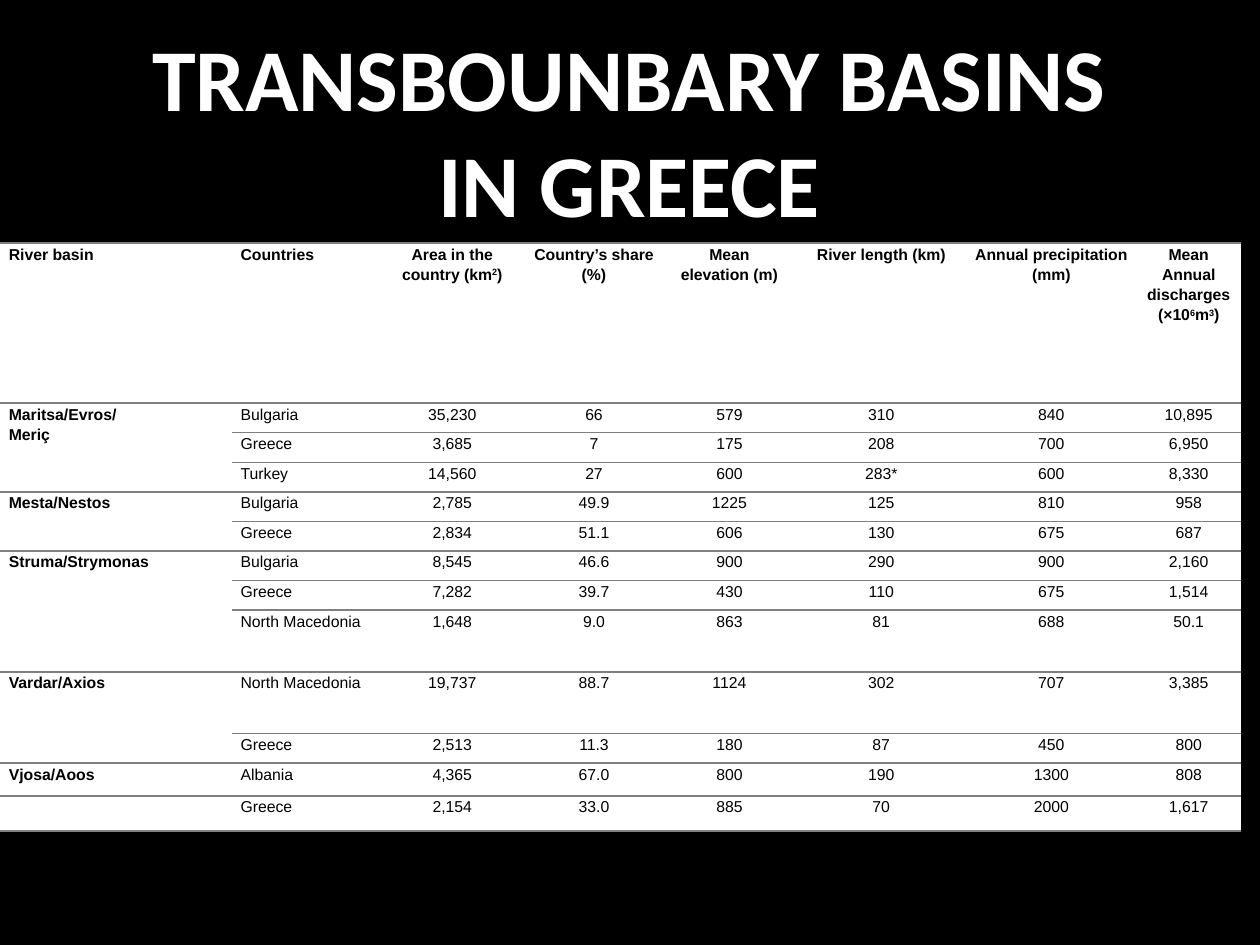
import pptx
import pptx.dml.color
import pptx.enum.text
import pptx.oxml
import pptx.oxml.ns
import pptx.util

Inches = pptx.util.Inches
ALIGN = pptx.enum.text.PP_ALIGN
ANCHOR = pptx.enum.text.MSO_ANCHOR


def rgb(value):
    return pptx.dml.color.RGBColor.from_string(value)


def write(tf, text, size=9, font="Arial", color="000000", bold=False,
          align=ALIGN.LEFT, spacing=1.15, margins=(0.07, 0), anchor=ANCHOR.TOP):
    tf.word_wrap = True
    tf.vertical_anchor = anchor
    tf.margin_left = tf.margin_right = Inches(margins[0])
    tf.margin_top = tf.margin_bottom = Inches(margins[1])
    for i, line in enumerate(text.split("\n")):
        p = tf.paragraphs[0] if i == 0 else tf.add_paragraph()
        p.alignment = align
        p.line_spacing = spacing
        for j, part in enumerate(line.split("^")):
            r = p.add_run()
            r.text = part
            r.font.size = pptx.util.Pt(size)
            r.font.name = font
            r.font.bold = bold
            r.font.color.rgb = rgb(color)
            if j % 2:
                r._r.get_or_add_rPr().set("baseline", "30000")


prs = pptx.Presentation()
prs.slide_width, prs.slide_height = Inches(10), Inches(7.5)
s = prs.slides.add_slide(prs.slide_layouts[5])
s.background.fill.solid()
s.background.fill.fore_color.rgb = rgb("000000")

title = s.shapes.title
title.left, title.top = Inches(0.85), Inches(0.12)
title.width, title.height = Inches(8.29), Inches(1.81)
write(title.text_frame, "TRANSBOUNBARY BASINS IN GREECE", size=50.4, font="Calibri",
      color="FFFFFF", bold=True, align=ALIGN.CENTER, spacing=1.0,
      margins=(0.1, 0.05), anchor=ANCHOR.MIDDLE)

header = ["River basin", "Countries", "Area in the country (km^2^)", "Country’s share (%)",
          "Mean\nelevation (m)", "River length (km)", "Annual precipitation (mm)",
          "Mean Annual discharges\n(×10^6^m^3^)"]
rows = [
    header,
    ["Maritsa/Evros/\nMeriç", "Bulgaria", "35,230", "66", "579", "310", "840", "10,895"],
    ["", "Greece", "3,685", "7", "175", "208", "700", "6,950"],
    ["", "Turkey", "14,560", "27", "600", "283*", "600", "8,330"],
    ["Mesta/Nestos", "Bulgaria", "2,785", "49.9", "1225", "125", "810", "958"],
    ["", "Greece", "2,834", "51.1", "606", "130", "675", "687"],
    ["Struma/Strymonas", "Bulgaria", "8,545", "46.6", "900", "290", "900", "2,160"],
    ["", "Greece", "7,282", "39.7", "430", "110", "675", "1,514"],
    ["", "North Macedonia", "1,648", "9.0", "863", "81", "688", "50.1"],
    ["Vardar/Axios", "North Macedonia", "19,737", "88.7", "1124", "302", "707", "3,385"],
    ["", "Greece", "2,513", "11.3", "180", "87", "450", "800"],
    ["Vjosa/Aoos", "Albania", "4,365", "67.0", "800", "190", "1300", "808"],
    ["", "Greece", "2,154", "33.0", "885", "70", "2000", "1,617"],
]
widths = [1.84, 1.17, 1.16, 1.09, 1.06, 1.35, 1.35, 0.83]
special_heights = {0: 1.27, 8: 0.49, 9: 0.49, 11: 0.26, 12: 0.26}
table_height = 4.65
row_height = (table_height - sum(special_heights.values())) / (len(rows) - len(special_heights))

table = s.shapes.add_table(len(rows), len(widths), 0, Inches(1.93),
                           Inches(9.86), Inches(table_height)).table
table.first_row = table.horz_banding = False
for col, width in zip(table.columns, widths):
    col.width = Inches(width)
for first, last in [(1, 3), (4, 5), (6, 8), (9, 10)]:
    table.cell(first, 0).merge(table.cell(last, 0))

no_line = "<a:noFill/>"
gray_line = '<a:solidFill><a:srgbClr val="7F7F7F"/></a:solidFill>'
borders = {"lnL": no_line, "lnR": no_line, "lnT": gray_line, "lnB": gray_line}
for i, values in enumerate(rows):
    table.rows[i].height = Inches(special_heights.get(i, row_height))
    for j, value in enumerate(values):
        cell = table.cell(i, j)
        write(cell.text_frame, value, bold=i == 0 or j == 0,
              align=ALIGN.LEFT if j < 2 else ALIGN.CENTER)
        cell.margin_left = cell.margin_right = Inches(0.07)
        cell.margin_top = cell.margin_bottom = 0
        cell.fill.solid()
        cell.fill.fore_color.rgb = rgb("FFFFFF")
        if cell.is_spanned:
            continue
        tcPr = cell._tc.get_or_add_tcPr()
        for k, (tag, line) in enumerate(borders.items()):
            tcPr.insert(k, pptx.oxml.parse_xml(
                f'<a:{tag} {pptx.oxml.ns.nsdecls("a")} w="12700">{line}</a:{tag}>'))

prs.save("out.pptx")
